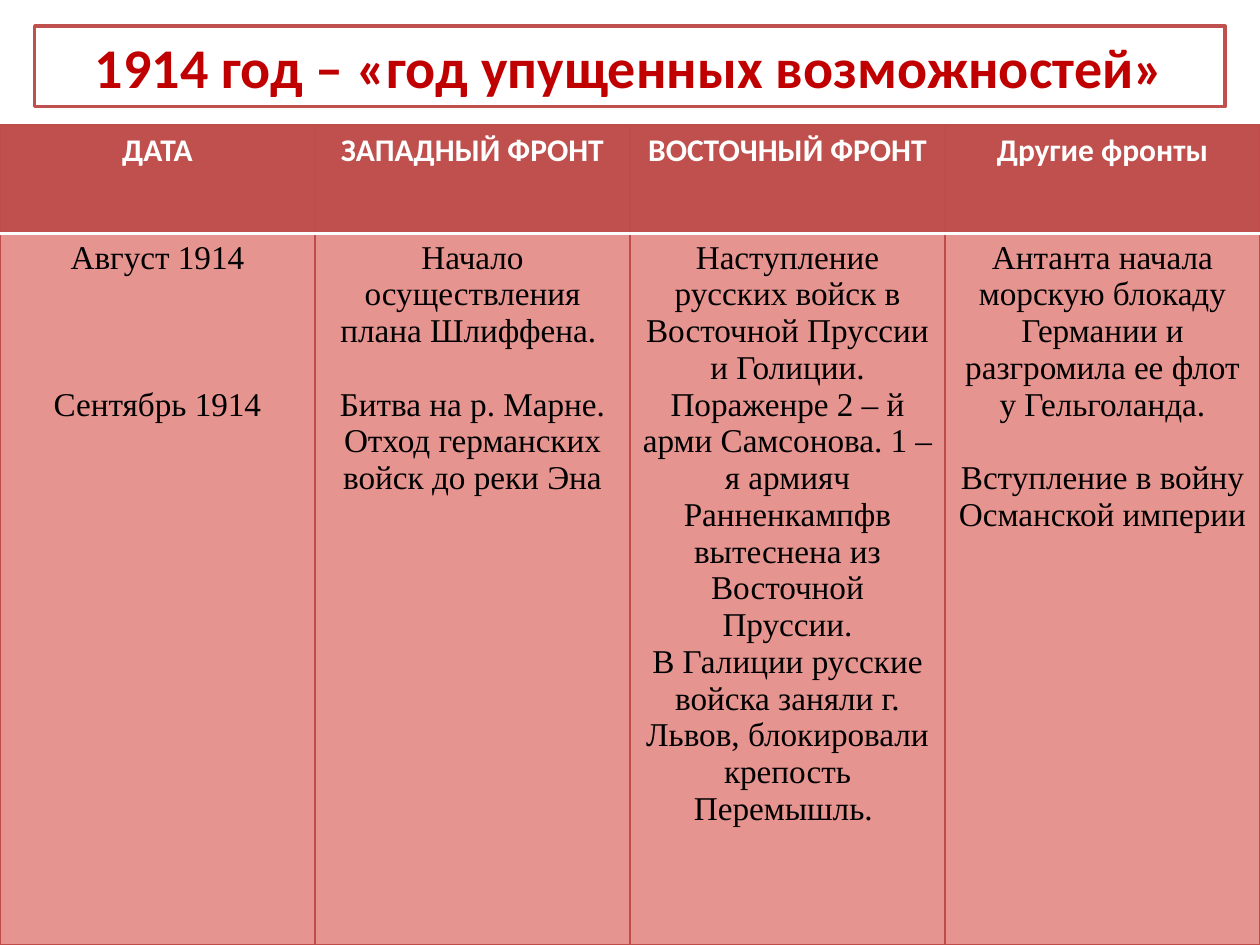
import pptx
import pptx.dml.color
import pptx.enum.shapes
import pptx.enum.text
import pptx.oxml
import pptx.oxml.ns
import pptx.util
from pptx.util import Cm

RED, BORDER, PINK, WHITE = "C0504D", "BF4C48", "E69490", "FFFFFF"
LINE_GAP = 21  # height of one body line, in points

TITLE = "1914 год – «год упущенных возможностей»"
HEADERS = ["ДАТА", "ЗАПАДНЫЙ ФРОНТ", "ВОСТОЧНЫЙ ФРОНТ", "Другие фронты"]
# Each column: paragraphs, and the number of lines left free between them
EVENTS = [
    (["Август 1914", "Сентябрь 1914"], 3),
    (["Начало осуществления плана Шлиффена. ",
      "Битва на р. Марне. Отход германских войск до реки Эна"], 1),
    (["Наступление русских войск в Восточной Пруссии и Голиции. "
      "Пораженре 2 – й арми Самсонова. 1 – я армияч Ранненкампфв "
      "вытеснена из Восточной Пруссии.",
      "В Галиции русские войска заняли г. Львов, "
      "блокировали крепость Перемышль. "], 0),
    (["Антанта начала морскую блокаду Германии и разгромила ее флот "
      "у Гельголанда.",
      "Вступление в войну Османской империи"], 1),
]


def color(value):
    return pptx.dml.color.RGBColor.from_string(value)


class SlideBuilder:
    """Holds the text styles and the current slide."""

    styles = {
        "title": ({"name": "Calibri", "size": pptx.util.Pt(32), "bold": True}, "C00000"),
        "header": ({"name": "Calibri", "size": pptx.util.Pt(18), "bold": True}, WHITE),
        "body": ({"name": "Times New Roman", "size": pptx.util.Pt(19), "bold": False}, "000000"),
    }

    def __init__(self, slide):
        self.slide = slide

    def add_text(self, text_frame, paragraphs, style, free_lines=0):
        font_values, font_color = self.styles[style]
        for index, text in enumerate(paragraphs):
            paragraph = text_frame.paragraphs[0] if index == 0 else text_frame.add_paragraph()
            paragraph.alignment = pptx.enum.text.PP_ALIGN.CENTER
            if index:
                paragraph.space_before = pptx.util.Pt(free_lines * LINE_GAP)
            run = paragraph.add_run()
            run.text = text
            for name, value in font_values.items():
                setattr(run.font, name, value)
            run.font.color.rgb = color(font_color)

    def title_box(self, left, top, width, height, text):
        shape = self.slide.shapes.add_shape(
            pptx.enum.shapes.MSO_SHAPE.RECTANGLE, left, top, width, height)
        shape.shadow.inherit = False
        shape.fill.solid()
        shape.fill.fore_color.rgb = color(WHITE)
        shape.line.color.rgb = color(RED)
        shape.line.width = pptx.util.Pt(2)
        shape.text_frame.word_wrap = True
        self.add_text(shape.text_frame, [text], "title")

    def border(self, cell, side, line_color, points):
        properties = cell._tc.get_or_add_tcPr()
        properties.append(pptx.oxml.parse_xml(
            f'<a:ln{side} {pptx.oxml.ns.nsdecls("a")} w="{pptx.util.Pt(points)}">'
            f'<a:solidFill><a:srgbClr val="{line_color}"/></a:solidFill></a:ln{side}>'))

    def cell(self, cell, fill, white_side, paragraphs, style, free_lines=0):
        for side in "LRTB":
            line = (WHITE, 2) if side == white_side else (BORDER, 0.75)
            self.border(cell, side, *line)
        cell.fill.solid()
        cell.fill.fore_color.rgb = color(fill)
        self.add_text(cell.text_frame, paragraphs, style, free_lines)

    def table(self, left, top, width, row_heights, headers, events):
        table = self.slide.shapes.add_table(
            len(row_heights), len(headers), left, top, width, sum(row_heights)).table
        for row, height in zip(table.rows, row_heights):
            row.height = height
        for index, (header, (paragraphs, free_lines)) in enumerate(zip(headers, events)):
            self.cell(table.cell(0, index), RED, "B", [header], "header")
            self.cell(table.cell(1, index), PINK, "T", paragraphs, "body", free_lines)


def main():
    presentation = pptx.Presentation()
    presentation.slide_width, presentation.slide_height = Cm(25.4), Cm(19.05)
    builder = SlideBuilder(presentation.slides.add_slide(presentation.slide_layouts[6]))

    # Table of events by front
    builder.table(Cm(0), Cm(2.52), presentation.slide_width,
                  [Cm(2.18), Cm(14.35)], HEADERS, EVENTS)
    # Framed title
    builder.title_box(Cm(0.7), Cm(0.53), Cm(24), Cm(1.62), TITLE)

    presentation.save("out.pptx")


if __name__ == "__main__":
    main()
